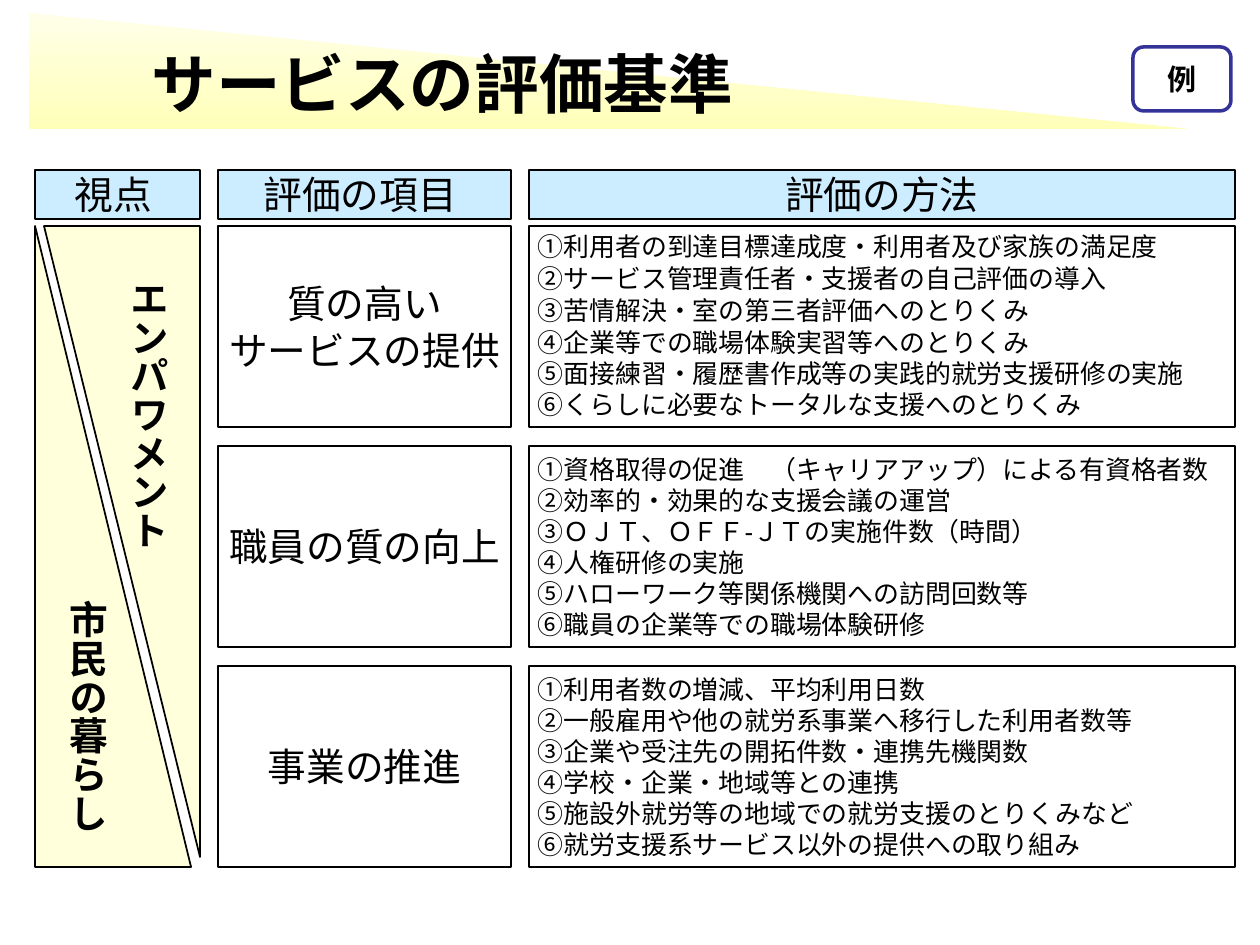
from lxml.etree import SubElement
from pptx import Presentation
from pptx.dml.color import RGBColor
from pptx.enum.shapes import MSO_SHAPE
from pptx.enum.text import MSO_ANCHOR, MSO_AUTO_SIZE, PP_ALIGN
from pptx.oxml.ns import qn
from pptx.util import Emu, Pt

EMU_PER_PX = 914400 / 126
HEADER_HEIGHT = 49
ROW_TOP, ROW_HEIGHT, ROW_PITCH = 56, 201, 220
ITEM_LEFT, ITEM_WIDTH = 183, 293
METHOD_LEFT, METHOD_WIDTH = 494, 706
VIEW_WIDTH, VIEW_HEIGHT = 165, 641

CRITERIA = [
    (["質の高い", "サービスの提供"], "Arial", [
        "①利用者の到達目標達成度・利用者及び家族の満足度",
        "②サービス管理責任者・支援者の自己評価の導入",
        "③苦情解決・室の第三者評価へのとりくみ",
        "④企業等での職場体験実習等へのとりくみ",
        "⑤面接練習・履歴書作成等の実践的就労支援研修の実施",
        "⑥くらしに必要なトータルな支援へのとりくみ",
    ]),
    (["職員の質の向上"], "Noto Sans CJK JP", [
        "①資格取得の促進　（キャリアアップ）による有資格者数",
        "②効率的・効果的な支援会議の運営",
        "③ＯＪＴ、ＯＦＦ-ＪＴの実施件数（時間）",
        "④人権研修の実施",
        "⑤ハローワーク等関係機関への訪問回数等",
        "⑥職員の企業等での職場体験研修",
    ]),
    (["事業の推進"], "Arial", [
        "①利用者数の増減、平均利用日数",
        "②一般雇用や他の就労系事業へ移行した利用者数等",
        "③企業や受注先の開拓件数・連携先機関数",
        "④学校・企業・地域等との連携",
        "⑤施設外就労等の地域での就労支援のとりくみなど",
        "⑥就労支援系サービス以外の提供への取り組み",
    ]),
]


def px(length):
    return Emu(round(length * EMU_PER_PX))


def color(code):
    return RGBColor.from_string(code)


def apply(target, values):
    for name, value in values.items():
        setattr(target, name, value)


def indent(paragraph, length):
    properties = paragraph._p.get_or_add_pPr()
    properties.set("marL", str(px(length)))
    properties.set("indent", str(-px(length)))


def write(shape, lines, size, font="Arial", bold=False, align=PP_ALIGN.CENTER,
          wrap=True, inset=(9, 1)):
    frame = shape.text_frame
    side, edge = map(px, inset)
    apply(frame, dict(auto_size=MSO_AUTO_SIZE.NONE, word_wrap=wrap,
                      vertical_anchor=MSO_ANCHOR.MIDDLE, margin_left=side,
                      margin_right=side, margin_top=edge, margin_bottom=edge))
    for number, line in enumerate(lines):
        paragraph = frame.add_paragraph() if number else frame.paragraphs[0]
        paragraph.alignment = align
        run = paragraph.add_run()
        run.text = line
        apply(run.font, dict(name=font, size=Pt(size), bold=bold))
        run.font.color.rgb = color("000000")


def panel(slide, box, fill=None, line="000000", weight=1, kind=MSO_SHAPE.RECTANGLE):
    shape = slide.shapes.add_shape(kind, *map(px, box))
    shape.shadow.inherit = False
    if fill:
        shape.fill.solid()
        shape.fill.fore_color.rgb = color(fill)
    else:
        shape.fill.background()
    if line:
        shape.line.color.rgb = color(line)
        shape.line.width = Pt(weight)
    else:
        shape.line.fill.background()
    return shape


def heading(slide, left, top, width, label):
    write(panel(slide, (left, top, width, HEADER_HEIGHT), "CCECFF"), [label], 22.1)


def criteria_row(slide, left, top, items, font, methods):
    item = panel(slide, (left + ITEM_LEFT, top, ITEM_WIDTH, ROW_HEIGHT))
    write(item, items, 22.1, font)
    method = panel(slide, (left + METHOD_LEFT, top, METHOD_WIDTH, ROW_HEIGHT))
    write(method, methods, 14.8, align=PP_ALIGN.LEFT)
    return method


def viewpoint(slide, box, label, turn=0):
    triangle = panel(slide, box, "FFFFB9", kind=MSO_SHAPE.RIGHT_TRIANGLE)
    triangle.rotation = turn
    tint = triangle._element.spPr.find(qn("a:solidFill"))[0]
    SubElement(tint, qn("a:alpha"), val="49000")
    write(triangle, [label], 22.1, bold=True, wrap=False)
    body = triangle.text_frame._txBody.bodyPr
    body.set("vert", "eaVert")
    if turn:
        body.set("rot", str(turn * 60000))


def criteria_grid(slide, left, top):
    heading(slide, left, top, VIEW_WIDTH, "視点 ")
    heading(slide, left + ITEM_LEFT, top, ITEM_WIDTH, "評価の項目 ")
    heading(slide, left + METHOD_LEFT, top, METHOD_WIDTH, "評価の方法")
    first_row = top + ROW_TOP
    methods = [criteria_row(slide, left, first_row + row * ROW_PITCH, *content)
               for row, content in enumerate(CRITERIA)]
    for paragraph in methods[0].text_frame.paragraphs[:3]:
        apply(paragraph, dict(line_spacing=0.95, space_before=Pt(1.5)))
        indent(paragraph, 68)
    viewpoint(slide, (left + 9, first_row, VIEW_WIDTH - 9, VIEW_HEIGHT - 10),
              "エンパワメント", 180)
    viewpoint(slide, (left, first_row, VIEW_WIDTH - 9, VIEW_HEIGHT), "市民の暮らし")


def banner(slide, left, top, width, height):
    wedge = panel(slide, (left, top, width, height), line=None,
                  kind=MSO_SHAPE.RIGHT_TRIANGLE)
    wedge.fill.gradient()
    wedge.fill.gradient_angle = 270
    for stop, code in zip(wedge.fill.gradient_stops, ("FFFFE9", "FFFFB9")):
        stop.color.rgb = color(code)
    title = slide.shapes.title
    apply(title, dict(left=px(left + 77), top=px(top + 25),
                      width=px(673), height=px(89)))
    write(title, ["サービスの評価基準"], 36.9, bold=True, inset=(13, 6))
    heading_line = title.text_frame.paragraphs[0]
    heading_line.space_before = Pt(7)
    indent(heading_line, 44)
    title._element.getparent().append(title._element)
    badge = panel(slide, (left + 1104, top + 34, 98, 64), "FFFFFF", "333399", 2,
                  MSO_SHAPE.ROUNDED_RECTANGLE)
    write(badge, ["例"], 16.6, bold=True, wrap=False)


def main():
    deck = Presentation()
    apply(deck, dict(slide_width=px(1260), slide_height=px(945)))
    slide = deck.slides.add_slide(deck.slide_layouts[5])
    criteria_grid(slide, 35, 170)
    banner(slide, 29, 13, 1157, 116)
    deck.save("out.pptx")


if __name__ == "__main__":
    main()
